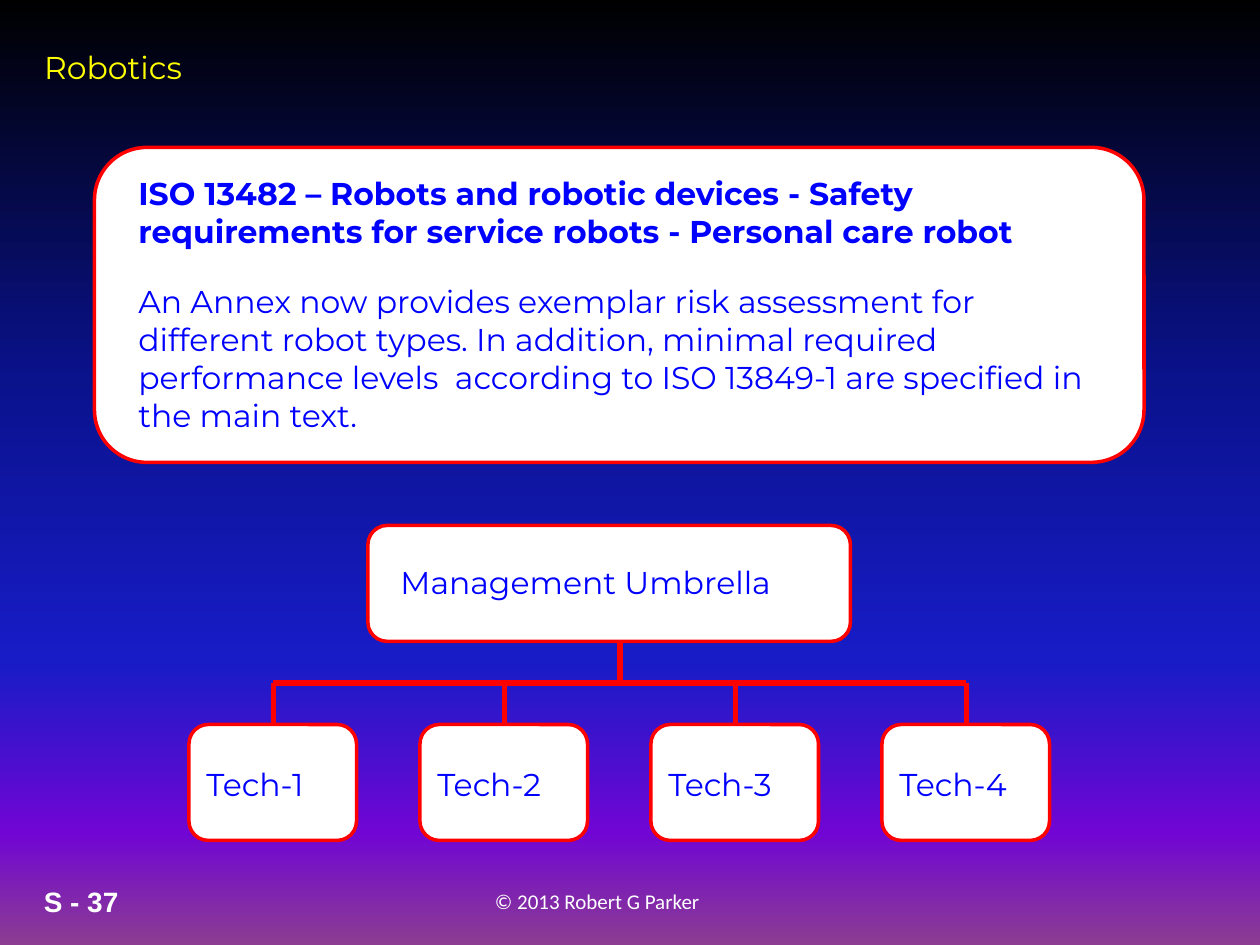
from lxml.etree import SubElement
from pptx import Presentation
from pptx.dml.color import RGBColor
from pptx.enum.shapes import MSO_CONNECTOR, MSO_SHAPE
from pptx.enum.text import MSO_ANCHOR, MSO_AUTO_SIZE, PP_ALIGN
from pptx.oxml.ns import qn
from pptx.util import Inches, Pt


def color(value):
    return RGBColor.from_string(value)


def write(box, place, text, hue="0000FF", face="Montserrat", size=18, bold=False):
    box.left, box.top, box.width, box.height = [Inches(v) for v in place]
    frame = box.text_frame
    frame.word_wrap = True
    frame.auto_size = MSO_AUTO_SIZE.SHAPE_TO_FIT_TEXT
    frame.vertical_anchor = MSO_ANCHOR.TOP
    para = frame.paragraphs[0]
    para.text = text
    para.alignment = PP_ALIGN.LEFT
    para.font.name = face
    para.font.size = Pt(size)
    para.font.bold = bold
    para.font.color.rgb = color(hue)


deck = Presentation()
deck.slide_width, deck.slide_height = Inches(10), Inches(7.5)
page = deck.slides.add_slide(deck.slide_layouts[5])

# Background gradient, top to bottom
fill = page.background.fill
fill.gradient()
fill.gradient_angle = 270
stops = page.background._cSld.find(".//" + qn("a:gsLst"))
for stop in list(stops):
    stops.remove(stop)
for percent, value in [(0, "000000"), (40, "0A128C"), (70, "181CC7"),
                       (88, "7005D4"), (100, "8C3D91")]:
    stop = SubElement(stops, qn("a:gs"), pos=str(percent * 1000))
    SubElement(stop, qn("a:srgbClr"), val=value)

# Title
write(page.shapes.title, (0.25, 0.33, 1.67, 0.4), "Robotics", "FFFF00")

# White panels: standard, management and four technical boxes
tech_lefts = [1.5 + i * 5.5 / 3 for i in range(4)]
panels = [(0.75, 1.17, 8.33, 2.5), (2.92, 4.17, 3.83, 0.92)]
panels += [(left, 5.75, 1.33, 0.92) for left in tech_lefts]
for place in panels:
    panel = page.shapes.add_shape(MSO_SHAPE.ROUNDED_RECTANGLE, *[Inches(v) for v in place])
    panel.shadow.inherit = False
    panel.fill.solid()
    panel.fill.fore_color.rgb = color("FFFFFF")
    panel.line.color.rgb = color("FF0000")
    panel.line.width = Pt(2)

# Panel and footer texts
labels = [
    ((1, 1.33, 7.83, 0.71), "ISO 13482 – Robots and robotic devices - Safety requirements "
     "for service robots - Personal care robot", {"bold": True}),
    ((1, 2.19, 7.83, 1.31), "An Annex now provides exemplar risk assessment for different "
     "robot types. In addition, minimal required performance levels  according to "
     "ISO 13849-1 are specified in the main text.", {}),
    ((3.08, 4.42, 3.58, 0.4), "Management Umbrella", {}),
    ((0.25, 6.97, 0.92, 0.37), "S - 37",
     {"hue": "FFFFFF", "face": "Arial", "size": 16, "bold": True}),
    ((3.83, 7, 2.25, 0.3), "© 2013 Robert G Parker",
     {"hue": "FFFFFF", "face": "Calibri", "size": 12}),
]
for number, left in enumerate(tech_lefts, 1):
    labels.append(((left + 0.04, 6.02, 1.25, 0.42), f"Tech-{number}", {}))
for place, text, style in labels:
    write(page.shapes.add_textbox(0, 0, 0, 0), place, text, **style)

# Tree lines: bar, branches to the technical boxes, trunk
bar_y = 5.42
branches = [left + 0.67 for left in tech_lefts]
lines = [(branches[0], bar_y, branches[-1], bar_y)]
lines += [(x, bar_y, x, 5.75) for x in branches]
lines.append((4.92, 5.08, 4.92, bar_y))
for ends in lines:
    line = page.shapes.add_connector(MSO_CONNECTOR.STRAIGHT, *[Inches(v) for v in ends])
    line.line.color.rgb = color("FF0000")
    line.line.width = Pt(3)
    SubElement(line._element.spPr, qn("a:effectLst"))

deck.save("out.pptx")
